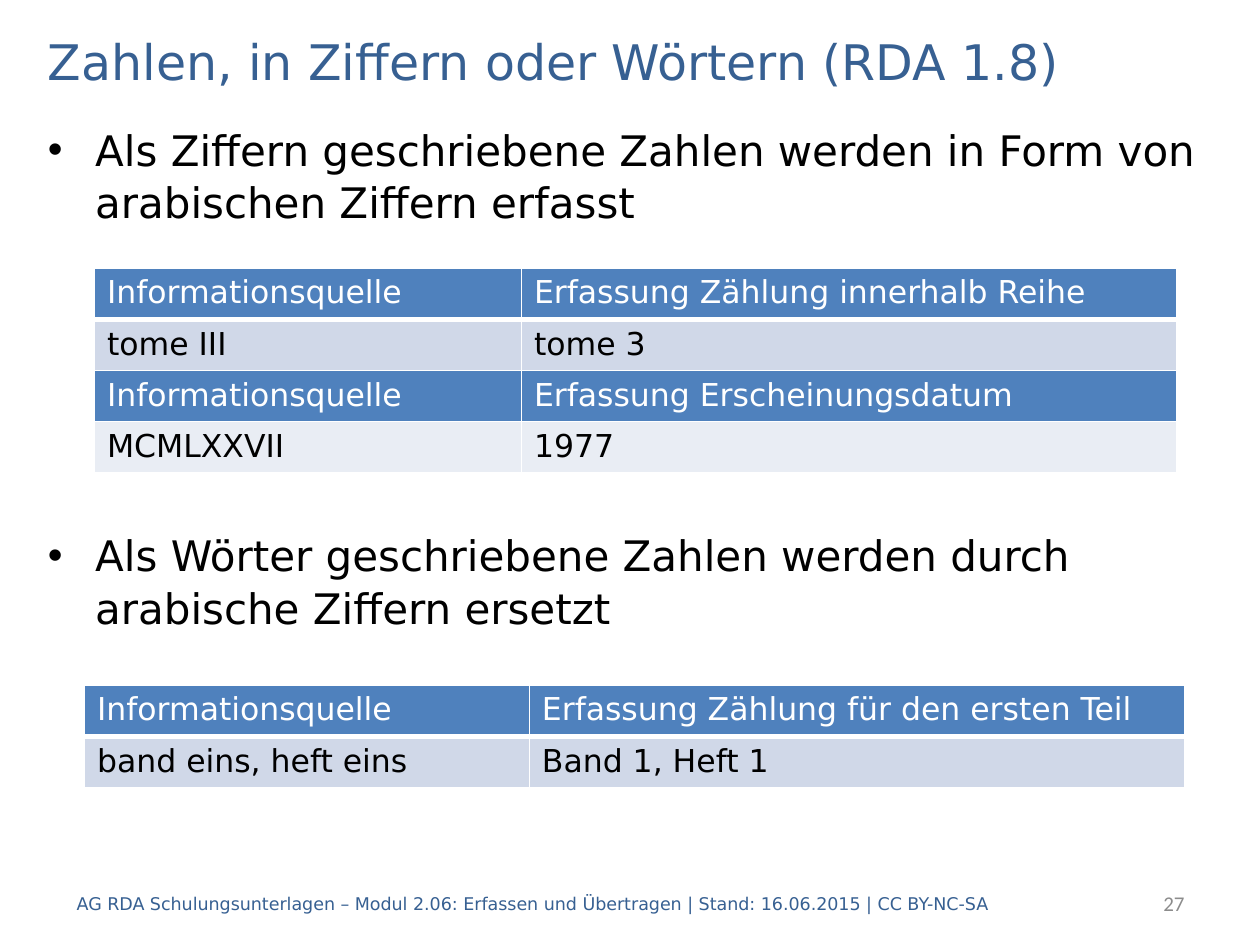
from lxml.etree import SubElement
from pptx import Presentation
from pptx.dml.color import RGBColor
from pptx.enum.text import MSO_ANCHOR, MSO_AUTO_SIZE, PP_ALIGN
from pptx.oxml.ns import qn
from pptx.util import Pt

COLORS = {
    "heading": "376092", "text": "000000", "white": "FFFFFF", "number": "8C8C8C",
    "head": "4F81BD", "band": "D0D8E8", "light": "E9EDF4",
}
FONT = "DejaVu Sans"

TITLE = "Zahlen, in Ziffern oder Wörtern (RDA 1.8)"
BULLETS = [
    "Als Ziffern geschriebene Zahlen werden in Form von arabischen Ziffern erfasst",
    "Als Wörter geschriebene Zahlen werden durch arabische Ziffern ersetzt",
]
FOOTER = ("AG RDA Schulungsunterlagen – Modul 2.06: Erfassen und Übertragen"
          " | Stand: 16.06.2015 | CC BY-NC-SA")
PAGE = "27"
ROW_HEIGHT = 29.2
TABLES = [
    {"at": (54, 153.4), "cols": (244, 374.4), "rows": [
        ("head", "Informationsquelle", "Erfassung Zählung innerhalb Reihe"),
        ("band", "tome III", "tome 3"),
        ("head", "Informationsquelle", "Erfassung Erscheinungsdatum"),
        ("light", "MCMLXXVII", "1977"),
    ]},
    {"at": (48.3, 391.7), "cols": (254.2, 374.4), "rows": [
        ("head", "Informationsquelle", "Erfassung Zählung für den ersten Teil"),
        ("band", "band eins, heft eins", "Band 1, Heft 1"),
    ]},
]


def rgb(name):
    return RGBColor.from_string(COLORS[name])


def write(p, text, size=18, color="text", font=FONT, align=PP_ALIGN.LEFT):
    p.alignment = align
    r = p.add_run()
    r.text = text
    r.font.size, r.font.name, r.font.bold = Pt(size), font, False
    r.font.color.rgb = rgb(color)


def place(sp, left, top, width, height, anchor):
    sp.left, sp.top, sp.width, sp.height = map(Pt, (left, top, width, height))
    tf = sp.text_frame
    tf.word_wrap, tf.auto_size = True, MSO_AUTO_SIZE.NONE
    tf.vertical_anchor = anchor
    return tf


def set_borders(cell, **widths):
    tcPr = cell._tc.get_or_add_tcPr()
    for i, (side, width) in enumerate(widths.items()):
        ln = SubElement(tcPr, qn(f"a:ln{side}"), w=str(Pt(width)))
        fill = SubElement(ln, qn("a:solidFill"))
        SubElement(fill, qn("a:srgbClr"), val=COLORS["white"])
        tcPr.insert(i, ln)  # borders precede the cell fill


def add_grid(slide, at, cols, rows):
    size = sum(cols), ROW_HEIGHT * len(rows)
    table = slide.shapes.add_table(len(rows), len(cols), *map(Pt, at + size)).table
    table.first_row = table.horz_banding = False
    for col, width in zip(table.columns, cols):
        col.width = Pt(width)
    for i, (style, *texts) in enumerate(rows):
        table.rows[i].height = Pt(ROW_HEIGHT)
        for j, text in enumerate(texts):
            cell = table.cell(i, j)
            cell.fill.solid()
            cell.fill.fore_color.rgb = rgb(style)
            write(cell.text_frame.paragraphs[0], text,
                  color="white" if style == "head" else "text")
            # thick rule below the first row
            set_borders(cell, L=1, R=1, T=3 if i == 1 else 1, B=3 if i == 0 else 1)


prs = Presentation()
prs.slide_width, prs.slide_height = Pt(720), Pt(540)
slide = prs.slides.add_slide(prs.slide_layouts[1])

# Title
tf = place(slide.shapes.title, 20.2, 14.4, 680.4, 40.3, MSO_ANCHOR.MIDDLE)
write(tf.paragraphs[0], TITLE, size=28, color="heading")

# Bullets, with room for the first table between them
tf = place(slide.placeholders[1], 20.2, 66.2, 680.4, 430.6, MSO_ANCHOR.TOP)
for i, text in enumerate(BULLETS):
    p = tf.add_paragraph() if i else tf.paragraphs[0]
    p.line_spacing = 1.04
    if i:
        p.space_before = Pt(172)
    write(p, text, size=24)

# Tables
for spec_table in TABLES:
    add_grid(slide, **spec_table)

# Footer and page number
for box, text, style in [
    ((36.7, 501.8, 601.2, 28.8), FOOTER, {"size": 10, "color": "heading"}),
    ((569.5, 501.8, 114.5, 28.8), PAGE,
     {"size": 12, "color": "number", "font": "Calibri", "align": PP_ALIGN.RIGHT}),
]:
    sp = slide.shapes.add_textbox(*map(Pt, box))
    tf = place(sp, *box, MSO_ANCHOR.MIDDLE)
    write(tf.paragraphs[0], text, **style)

prs.save("out.pptx")
